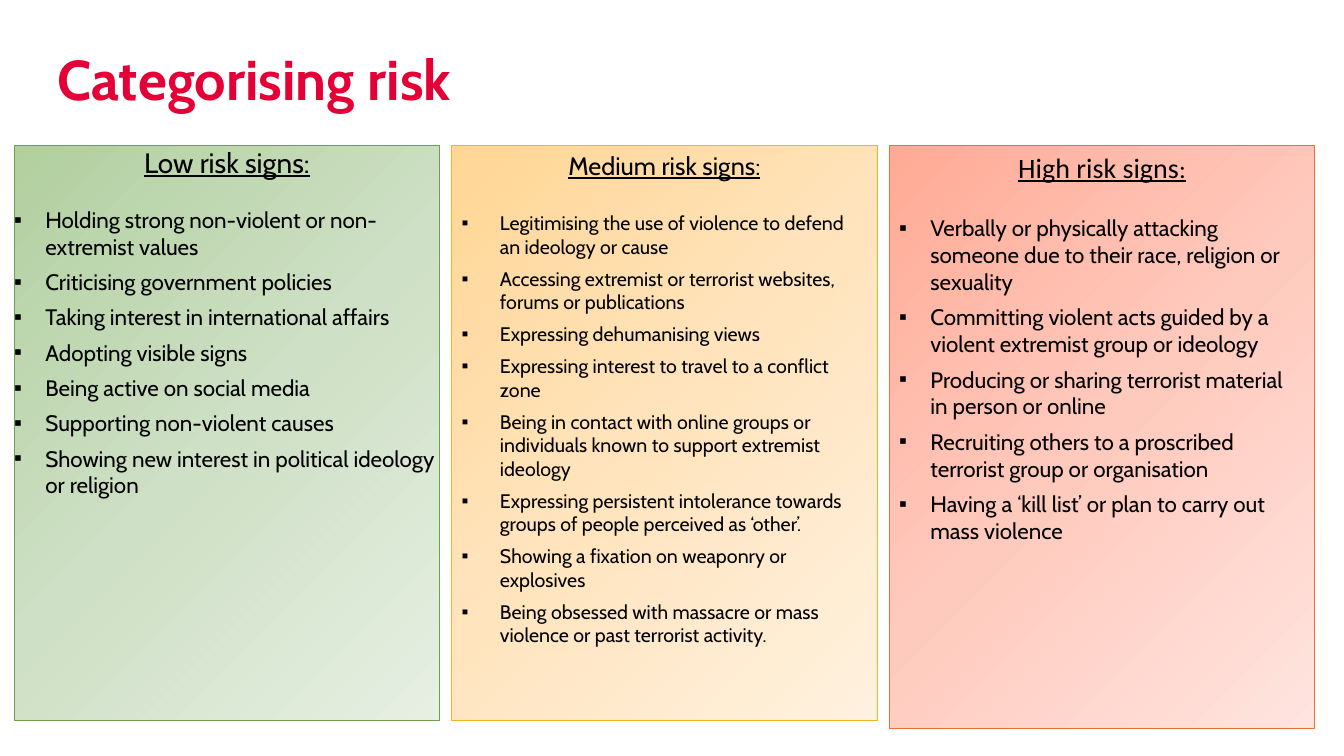
from copy import deepcopy
from dataclasses import dataclass

from lxml.etree import SubElement
from pptx import Presentation
from pptx.dml.color import RGBColor as Rgb
from pptx.enum.shapes import MSO_SHAPE as Shape
from pptx.enum.text import MSO_ANCHOR as Anchor, MSO_AUTO_SIZE as AutoSize, PP_ALIGN as Align
from pptx.oxml.ns import qn
from pptx.util import Inches, Pt


@dataclass(frozen=True)
class Theme:
    font: str = "Cabin"
    alternate_font: str = "Calibri"
    title_color: str = "E40037"
    text_color: str = "000000"
    title_size: int = 40
    large: int = 20
    medium: int = 18
    body: int = 16
    small: int = 14
    bullet_gap: int = 6
    border: float = 0.75


@dataclass(frozen=True)
class RiskLevel:
    heading: tuple
    signs: tuple
    sign_size: int
    heading_gap: float
    indent: float
    inset: tuple
    height: float
    gradient: tuple
    border_color: str


class RiskSlide:
    def __init__(self, deck, theme):
        self.theme = theme
        self.slide = deck.slides.add_slide(deck.slide_layouts[5])

    def add_run(self, paragraph, text, size, color=None, font=None, bold=False, underline=False):
        run = paragraph.add_run()
        run.text = text
        run.font.size = Pt(size)
        run.font.name = font or self.theme.font
        run.font.bold = bold
        run.font.underline = underline
        run.font.color.rgb = Rgb.from_string(color or self.theme.text_color)

    def set_frame(self, frame, anchor, inset):
        frame.word_wrap = True
        frame.auto_size = AutoSize.NONE
        frame.vertical_anchor = anchor
        frame.margin_left = frame.margin_right = Inches(inset[0])
        frame.margin_top = frame.margin_bottom = Inches(inset[1])

    def add_title(self, text):
        title = self.slide.shapes.title
        title.left, title.top = Inches(0.57), Inches(0.43)
        title.width, title.height = Inches(11.55), Inches(0.68)
        self.set_frame(title.text_frame, Anchor.MIDDLE, (0, 0))
        paragraph = title.text_frame.paragraphs[0]
        paragraph.alignment = Align.LEFT
        self.add_run(paragraph, text, self.theme.title_size, self.theme.title_color, bold=True)

    def fill_gradient(self, panel, colors):
        panel.fill.gradient()
        panel.fill.gradient_angle = 315
        stop_list = panel.fill.gradient_stops and panel._element.spPr.find(".//" + qn("a:gsLst"))
        stop_list.append(deepcopy(stop_list[0]))
        for index, (stop, color) in enumerate(zip(panel.fill.gradient_stops, colors)):
            stop.position = index / (len(colors) - 1)
            stop.color.rgb = Rgb.from_string(color)

    def add_sign(self, frame, text, size, indent):
        paragraph = frame.add_paragraph()
        paragraph.alignment = Align.LEFT
        paragraph.space_after = Pt(self.theme.bullet_gap)
        properties = paragraph._p.get_or_add_pPr()
        properties.set("marL", str(Inches(indent)))
        properties.set("indent", str(-Inches(indent)))
        SubElement(properties, qn("a:buFont"), typeface="Arial")
        SubElement(properties, qn("a:buChar"), char="▪")
        self.add_run(paragraph, text, size)

    def add_panel(self, level, left, top, width):
        panel = self.slide.shapes.add_shape(
            Shape.RECTANGLE, Inches(left), Inches(top), Inches(width), Inches(level.height))
        panel.shadow.inherit = False
        self.fill_gradient(panel, level.gradient)
        panel.line.color.rgb = Rgb.from_string(level.border_color)
        panel.line.width = Pt(self.theme.border)
        frame = panel.text_frame
        self.set_frame(frame, Anchor.TOP, level.inset)
        heading = frame.paragraphs[0]
        heading.alignment = Align.CENTER
        heading.space_after = Pt(level.heading_gap)
        for text, size, font in level.heading:
            self.add_run(heading, text, size, font=font, underline=True)
        for sign in level.signs:
            self.add_sign(frame, sign, level.sign_size, level.indent)


def main():
    theme = Theme()
    levels = (
        RiskLevel(
            heading=(("Low risk signs:", theme.large, theme.font),),
            signs=(
                "Holding strong non-violent or non-extremist values",
                "Criticising government policies",
                "Taking interest in international affairs",
                "Adopting visible signs",
                "Being active on social media",
                "Supporting non-violent causes",
                "Showing new interest in political ideology or religion",
            ),
            sign_size=theme.body, heading_gap=19.5, indent=0.31, inset=(0, 0), height=5.71,
            gradient=("B1CF9F", "CEE0C5", "E7EFE3"), border_color="729D4D",
        ),
        RiskLevel(
            heading=(("Medium risk signs:", theme.medium, theme.font),),
            signs=(
                "Legitimising the use of violence to defend an ideology or cause",
                "Accessing extremist or terrorist websites, forums or publications",
                "Expressing dehumanising views",
                "Expressing interest to travel to a conflict zone",
                "Being in contact with online groups or individuals known to support "
                "extremist ideology",
                "Expressing persistent intolerance towards groups of people perceived as ‘other’.",
                "Showing a fixation on weaponry or explosives",
                "Being obsessed with massacre or mass violence or past terrorist activity.",
            ),
            sign_size=theme.small, heading_gap=22, indent=0.38, inset=(0.1, 0.05), height=5.71,
            gradient=("FFD694", "FFE4BE", "FFF1DF"), border_color="ECB720",
        ),
        RiskLevel(
            heading=(
                ("High risk signs", theme.large, theme.alternate_font),
                (":", theme.medium, theme.alternate_font),
            ),
            signs=(
                "Verbally or physically attacking someone due to their race, religion or sexuality",
                "Committing violent acts guided by a violent extremist group or ideology",
                "Producing or sharing terrorist material in person or online",
                "Recruiting others to a proscribed terrorist group or organisation",
                "Having a ‘kill list’ or plan to carry out mass violence",
            ),
            sign_size=theme.body, heading_gap=22, indent=0.31, inset=(0.1, 0.05), height=5.79,
            gradient=("FFAA95", "FFCABE", "FFE4DF"), border_color="E97135",
        ),
    )

    deck = Presentation()
    deck.slide_width, deck.slide_height = Inches(13.33), Inches(7.5)
    risk_slide = RiskSlide(deck, theme)
    risk_slide.add_title("Categorising risk")
    first_left, top, width, gap = 0.14, 1.44, 4.22, 0.12
    for column, level in enumerate(levels):
        risk_slide.add_panel(level, first_left + column * (width + gap), top, width)
    deck.save("out.pptx")


if __name__ == "__main__":
    main()
